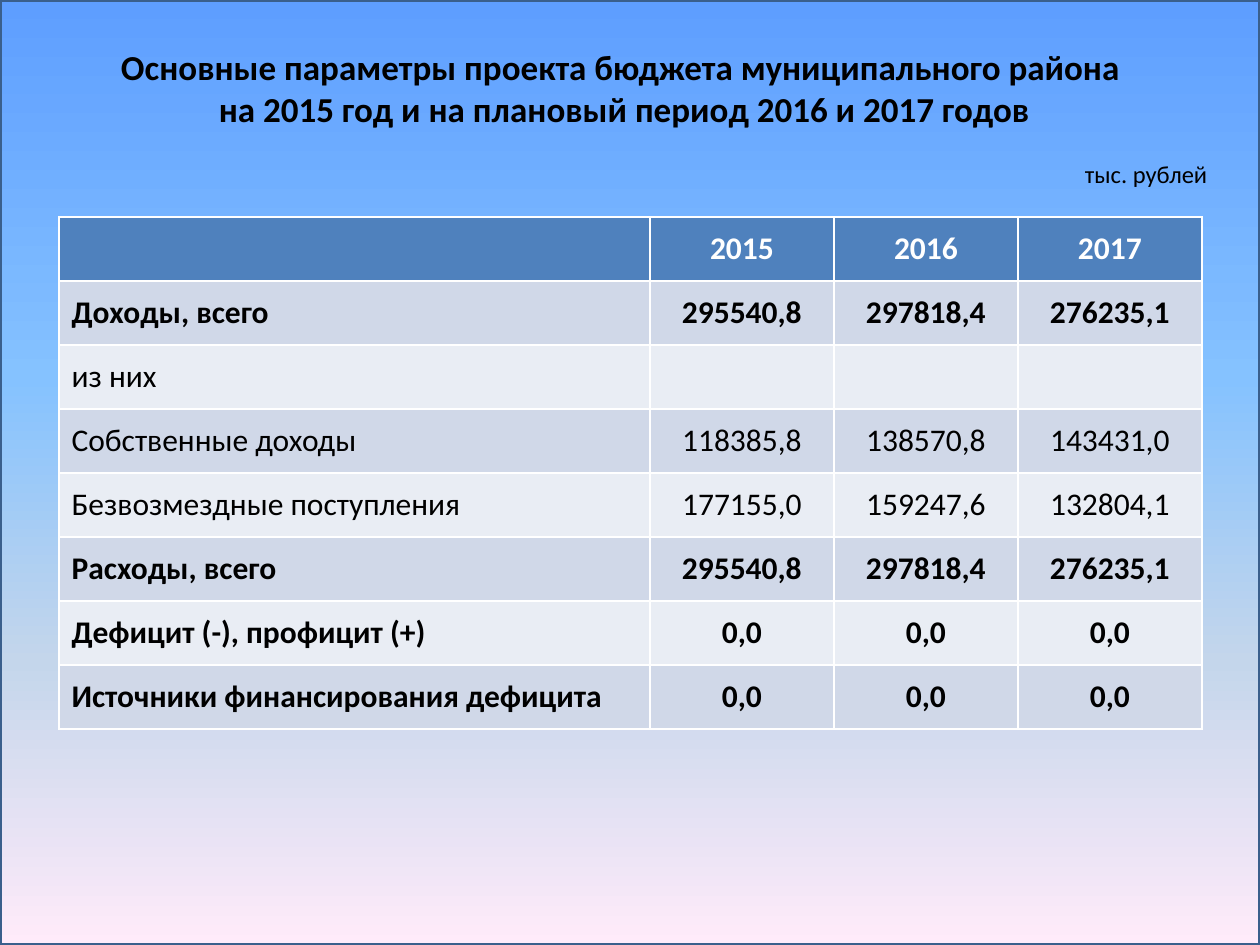
from copy import deepcopy
from lxml.etree import SubElement
from pptx import Presentation
from pptx.dml.color import RGBColor as RGB
from pptx.enum.shapes import MSO_SHAPE as Shape
from pptx.enum.text import MSO_ANCHOR as Anchor, PP_ALIGN as Align
from pptx.oxml.ns import qn
from pptx.util import Pt

TITLE = ("Основные параметры проекта бюджета муниципального района \n"
         "на 2015 год и на плановый период 2016 и 2017 годов")
UNIT = "тыс. рублей"
ROWS = [
    ("", "2015", "2016", "2017"),
    ("Доходы, всего", "295540,8", "297818,4", "276235,1"),
    ("из них", "", "", ""),
    ("Собственные доходы", "118385,8", "138570,8", "143431,0"),
    ("Безвозмездные поступления", "177155,0", "159247,6", "132804,1"),
    ("Расходы, всего", "295540,8", "297818,4", "276235,1"),
    ("Дефицит (-), профицит (+)", "0,0", "0,0", "0,0"),
    ("Источники финансирования дефицита", "0,0", "0,0", "0,0"),
]
PLAIN = {2, 3, 4}

BLACK = RGB(0x00, 0x00, 0x00)
WHITE = RGB(0xFF, 0xFF, 0xFF)
HEAD = RGB(0x4F, 0x81, 0xBD)
BANDS = [RGB(0xE9, 0xED, 0xF4), RGB(0xD0, 0xD8, 0xE8)]
EDGE = RGB(0x3A, 0x5F, 0x8C)
SKY = [
    (0, RGB(0x5E, 0x9E, 0xFF)),
    (40, RGB(0x85, 0xC2, 0xFF)),
    (70, RGB(0xC4, 0xD6, 0xEB)),
    (100, RGB(0xFF, 0xEB, 0xFA)),
]

WIDE, HIGH = 1260, 945
COLS = [591, 184, 184, 184]
ROW = 64


def px(n):
    return round(n * 914400 / 126)


def box(*nums):
    return [px(n) for n in nums]


def write(para, text, align, size, color, bold):
    para.text = text
    para.alignment = align
    look = {"name": "Calibri", "size": Pt(size), "bold": bold}
    for run in para.runs:
        for key, val in look.items():
            setattr(run.font, key, val)
        run.font.color.rgb = color
    for brk in para._p.findall(qn("a:br")):
        brk.insert(0, deepcopy(para.runs[0]._r.rPr))


def add_sky(slide):
    sky = slide.shapes.add_shape(Shape.RECTANGLE, *box(0, 0, WIDE, HIGH))
    sky.shadow.inherit = False
    sky.line.color.rgb = EDGE
    sky.line.width = Pt(2)
    sky.fill.gradient()
    grad = sky._element.spPr.find(qn("a:gradFill"))
    stops = grad.find(qn("a:gsLst"))
    for old in list(stops):
        stops.remove(old)
    for pos, color in SKY:
        stop = SubElement(stops, qn("a:gs"), pos=str(pos * 1000))
        SubElement(stop, qn("a:srgbClr"), val=str(color))
    grad.find(qn("a:lin")).set("ang", "5400000")
    slide.shapes._spTree.insert(2, sky._element)


def add_title(slide):
    title = slide.shapes.title
    title.left, title.top, title.width, title.height = box(29, 39, 1191, 158)
    frame = title.text_frame
    frame.word_wrap = True
    frame.vertical_anchor = Anchor.TOP
    write(frame.paragraphs[0], TITLE, Align.CENTER, 20, BLACK, True)
    unit = frame.add_paragraph()
    write(unit, UNIT, Align.RIGHT, 14, BLACK, False)
    unit.space_before = Pt(17)


def add_grid(slide):
    grid = slide.shapes.add_table(
        len(ROWS), len(COLS), *box(59, 217, sum(COLS), ROW * len(ROWS))).table
    for col, wide in zip(grid.columns, COLS):
        col.width = px(wide)
    for r, row in enumerate(ROWS):
        grid.rows[r].height = px(ROW)
        for c, text in enumerate(row):
            cell = grid.cell(r, c)
            cell.fill.solid()
            cell.fill.fore_color.rgb = BANDS[r % 2] if r else HEAD
            cell.vertical_anchor = Anchor.MIDDLE
            write(cell.text_frame.paragraphs[0], text,
                  Align.CENTER if c else Align.LEFT, 18,
                  BLACK if r else WHITE, r not in PLAIN)


def main():
    deck = Presentation()
    deck.slide_width, deck.slide_height = box(WIDE, HIGH)
    slide = deck.slides.add_slide(deck.slide_layouts[5])
    add_sky(slide)
    add_title(slide)
    add_grid(slide)
    deck.save("out.pptx")


if __name__ == "__main__":
    main()
